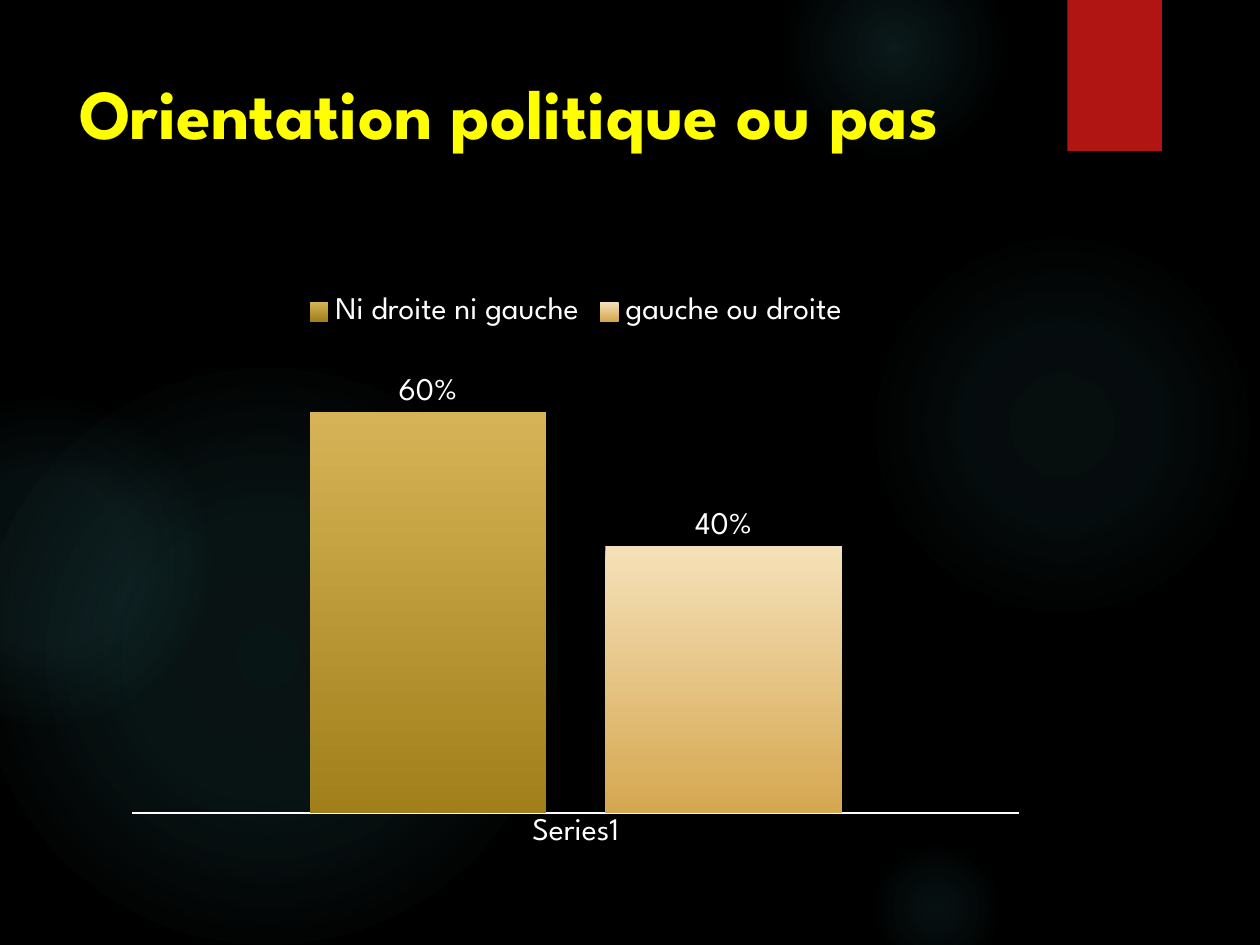
import pptx
import pptx.chart.data
import pptx.dml.color
import pptx.enum.chart
import pptx.enum.shapes
import pptx.enum.text
import pptx.oxml
import pptx.oxml.ns
import pptx.util

Pt = pptx.util.Pt
RGBColor = pptx.dml.color.RGBColor
SHAPES = pptx.enum.shapes.MSO_SHAPE

BLACK = RGBColor(0x00, 0x00, 0x00)
WHITE = RGBColor(0xFF, 0xFF, 0xFF)
YELLOW = RGBColor(0xFF, 0xFF, 0x00)
RED = RGBColor(0xB0, 0x15, 0x13)
TEAL = RGBColor(0x50, 0xB9, 0xC1)
GOLD = (RGBColor(0xD6, 0xB3, 0x56), RGBColor(0xA1, 0x7F, 0x1A))
CREAM = (RGBColor(0xF5, 0xE1, 0xB9), RGBColor(0xD5, 0xA7, 0x50))
FONT = "League Spartan"

GLOWS = [
    (496, 132, 222, ((0, 7), (36, 6), (69, 0))),
    (448, -36, 126, ((0, 14), (36, 7), (73, 0))),
    (496, 480, 78, ((0, 9), (36, 5), (66, 0))),
    (-12, 210, 330, ((0, 11), (36, 10), (75, 0))),
    (-66, 228, 186, ((0, 8), (36, 8), (72, 0))),
]


def add_plain_shape(slide, kind, left, top, width, height, color):
    shape = slide.shapes.add_shape(kind, Pt(left), Pt(top), Pt(width), Pt(height))
    shape.shadow.inherit = False
    shape.line.fill.background()
    shape.fill.solid()
    shape.fill.fore_color.rgb = color
    return shape


def add_glow(slide, left, top, diameter, opacities):
    glow = add_plain_shape(slide, SHAPES.OVAL, left, top, diameter, diameter, TEAL)
    stops = "".join(
        f'<a:gs pos="{position * 1000}"><a:srgbClr val="{TEAL}">'
        f'<a:alpha val="{opacity * 1000}"/></a:srgbClr></a:gs>'
        for position, opacity in opacities
    )
    gradient = pptx.oxml.parse_xml(
        f'<a:gradFill {pptx.oxml.ns.nsdecls("a")} rotWithShape="1">'
        f'<a:gsLst>{stops}</a:gsLst><a:path path="circle">'
        '<a:fillToRect l="50000" t="50000" r="50000" b="50000"/>'
        '</a:path></a:gradFill>'
    )
    properties = glow._element.spPr
    properties.replace(properties.find(pptx.oxml.ns.qn("a:solidFill")), gradient)


def place_title(slide, text):
    title = slide.shapes.title
    title.left, title.top, title.width, title.height = Pt(38), Pt(36), Pt(556), Pt(110)
    frame = title.text_frame
    frame.text = text
    frame.word_wrap = True
    frame.auto_size = pptx.enum.text.MSO_AUTO_SIZE.NONE
    frame.vertical_anchor = pptx.enum.text.MSO_ANCHOR.TOP
    heading = frame.paragraphs[0]
    heading.alignment = pptx.enum.text.PP_ALIGN.LEFT
    heading.font.name = FONT
    heading.font.size = Pt(40)
    heading.font.bold = True
    heading.font.color.rgb = YELLOW
    slide.shapes._spTree.append(title._element)


def fix_plot_area(chart, x, y, width, height):
    plot_area = chart._chartSpace.chart.plotArea
    for old_layout in plot_area.findall(pptx.oxml.ns.qn("c:layout")):
        plot_area.remove(old_layout)
    plot_area.insert(0, pptx.oxml.parse_xml(
        f'<c:layout {pptx.oxml.ns.nsdecls("c")}><c:manualLayout>'
        '<c:layoutTarget val="inner"/><c:xMode val="edge"/><c:yMode val="edge"/>'
        f'<c:x val="{x}"/><c:y val="{y}"/><c:w val="{width}"/><c:h val="{height}"/>'
        '</c:manualLayout></c:layout>'
    ))


def style_series(series, colors):
    series.format.fill.gradient()
    series.format.fill.gradient_angle = 270
    for stop, color in zip(series.format.fill.gradient_stops, colors):
        stop.color.rgb = color
    series.invert_if_negative = False
    labels = series.data_labels
    labels.show_value = True
    labels.number_format = "0%"
    labels.number_format_is_linked = False
    labels.position = pptx.enum.chart.XL_LABEL_POSITION.OUTSIDE_END


def add_orientation_chart(slide):
    shares = pptx.chart.data.CategoryChartData(number_format="0%")
    shares.categories = ["Series1"]
    shares.add_series("Ni droite ni gauche", [0.6])
    shares.add_series("gauche ou droite", [0.4])
    chart = slide.shapes.add_chart(
        pptx.enum.chart.XL_CHART_TYPE.COLUMN_CLUSTERED,
        Pt(65), Pt(161), Pt(528), Pt(330), shares,
    ).chart
    chart.has_title = False
    chart.font.name = FONT
    chart.font.size = Pt(18)
    chart.font.color.rgb = WHITE

    chart.has_legend = True
    chart.legend.position = pptx.enum.chart.XL_LEGEND_POSITION.TOP
    chart.legend.include_in_layout = False

    category_axis = chart.category_axis
    category_axis.major_tick_mark = pptx.enum.chart.XL_TICK_MARK.NONE
    category_axis.format.line.color.rgb = WHITE
    category_axis.format.line.width = Pt(0.75)

    value_axis = chart.value_axis
    value_axis.minimum_scale = 0
    value_axis.maximum_scale = 0.7
    value_axis.has_major_gridlines = False
    value_axis.visible = False

    columns = chart.plots[0]
    columns.vary_by_categories = False
    columns.gap_width = 150
    columns.overlap = -25
    for series, colors in zip(columns.series, (GOLD, CREAM)):
        style_series(series, colors)
    fix_plot_area(chart, 0.02, 0.11, 0.96, 0.81)


def main():
    presentation = pptx.Presentation()
    presentation.slide_width, presentation.slide_height = Pt(720), Pt(540)
    slide = presentation.slides.add_slide(presentation.slide_layouts[5])
    slide.background.fill.solid()
    slide.background.fill.fore_color.rgb = BLACK
    for glow in GLOWS:
        add_glow(slide, *glow)
    add_plain_shape(slide, SHAPES.RECTANGLE, 610, 0, 54, 86.4, RED)
    place_title(slide, "Orientation politique ou pas")
    add_orientation_chart(slide)
    presentation.save("out.pptx")


if __name__ == "__main__":
    main()
